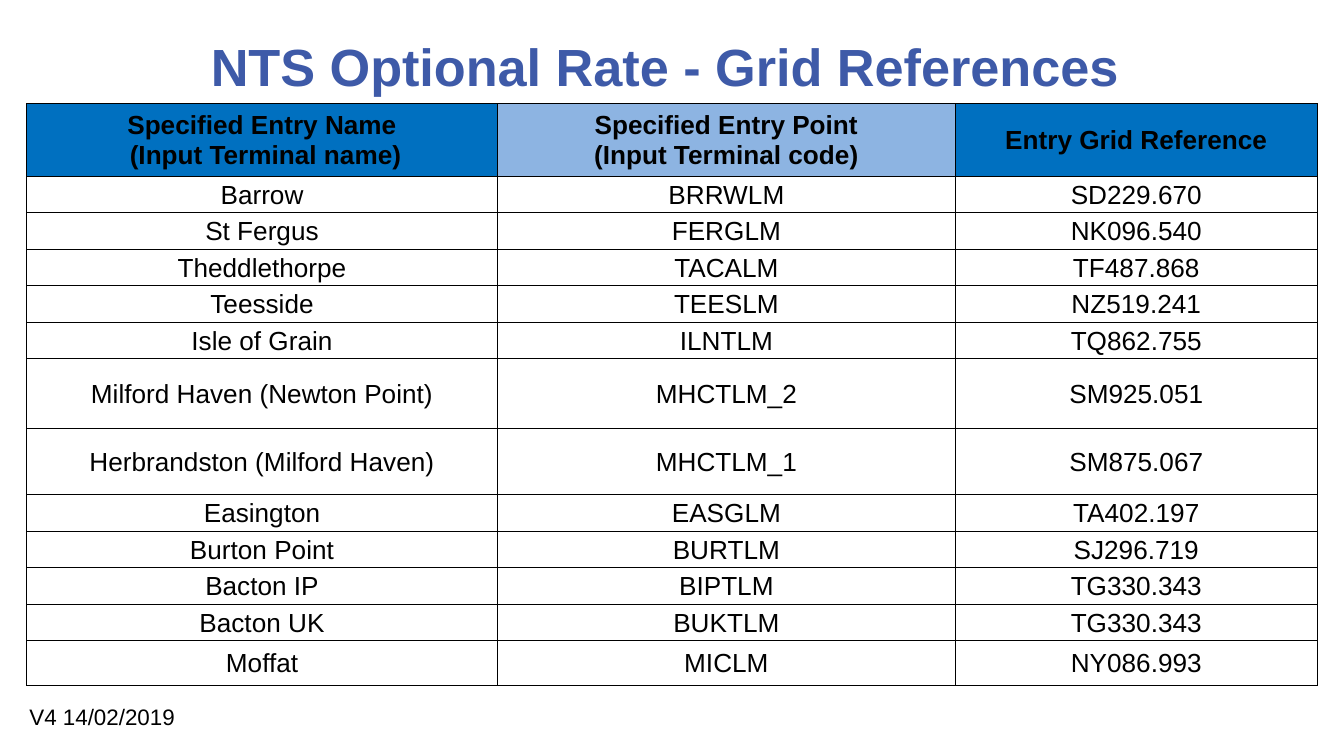
import pptx
import pptx.dml.color
import pptx.enum.text
import pptx.oxml.ns
import pptx.util
from lxml import etree

Inches = pptx.util.Inches
Pt = pptx.util.Pt
RGBColor = pptx.dml.color.RGBColor
Align = pptx.enum.text.PP_ALIGN
Anchor = pptx.enum.text.MSO_ANCHOR

TITLE_BLUE = RGBColor(0x3E, 0x5A, 0xA8)
HEADER_BLUE = RGBColor(0x00, 0x70, 0xC0)
HEADER_PALE = RGBColor(0x8D, 0xB4, 0xE2)
BLACK = RGBColor(0x00, 0x00, 0x00)

HEADERS = [
    ("Specified Entry Name\n (Input Terminal name)", HEADER_BLUE),
    ("Specified Entry Point\v(Input Terminal code)", HEADER_PALE),
    ("Entry Grid Reference", HEADER_BLUE),
]
ENTRY_POINTS = [
    ("Barrow", "BRRWLM", "SD229.670"),
    ("St Fergus", "FERGLM", "NK096.540"),
    ("Theddlethorpe", "TACALM", "TF487.868"),
    ("Teesside", "TEESLM", "NZ519.241"),
    ("Isle of Grain", "ILNTLM", "TQ862.755"),
    ("Milford Haven (Newton Point)", "MHCTLM_2", "SM925.051"),
    ("Herbrandston (Milford Haven)", "MHCTLM_1", "SM875.067"),
    ("Easington", "EASGLM", "TA402.197"),
    ("Burton Point", "BURTLM", "SJ296.719"),
    ("Bacton IP", "BIPTLM", "TG330.343"),
    ("Bacton UK", "BUKTLM", "TG330.343"),
    ("Moffat", "MICLM", "NY086.993"),
]
COLUMN_WIDTHS = [3.5, 3.41, 2.69]
TABLE_HEIGHT = 4.33
SPECIAL_HEIGHTS = {0: 0.54, 6: 0.52, 7: 0.49, 12: 0.33}


def write_text(frame, text, size=14, color=BLACK, bold=False, align=Align.CENTER):
    frame.text = text
    for paragraph in frame.paragraphs:
        paragraph.alignment = align
        for run in paragraph.runs:
            run.font.name = "Arial"
            run.font.size = Pt(size)
            run.font.bold = bold
            run.font.color.rgb = color


def add_label(slide, box, text, wrap=True, anchor=Anchor.TOP, **style):
    frame = slide.shapes.add_textbox(*map(Inches, box)).text_frame
    frame.word_wrap = wrap
    frame.vertical_anchor = anchor
    write_text(frame, text, **style)


def add_borders(cell):
    properties = cell._tc.get_or_add_tcPr()
    qn = pptx.oxml.ns.qn
    for side in ("a:lnL", "a:lnR", "a:lnT", "a:lnB"):
        line = etree.SubElement(properties, qn(side), w=str(Pt(0.5)))
        fill = etree.SubElement(line, qn("a:solidFill"))
        etree.SubElement(fill, qn("a:srgbClr"), val=str(BLACK))


def fill_cell(cell, text, color=None, **style):
    cell.margin_left = cell.margin_right = cell.margin_top = Inches(0.01)
    cell.margin_bottom = 0
    cell.vertical_anchor = Anchor.MIDDLE
    add_borders(cell)
    if color is None:
        cell.fill.background()
    else:
        cell.fill.solid()
        cell.fill.fore_color.rgb = color
    write_text(cell.text_frame, text, **style)


def add_grid_references(slide):
    row_count = len(ENTRY_POINTS) + 1
    shared_height = TABLE_HEIGHT - sum(SPECIAL_HEIGHTS.values())
    row_height = shared_height / (row_count - len(SPECIAL_HEIGHTS))
    table = slide.shapes.add_table(
        row_count, len(COLUMN_WIDTHS), Inches(0.2), Inches(0.77),
        Inches(sum(COLUMN_WIDTHS)), Inches(TABLE_HEIGHT),
    ).table
    table.first_row = table.horz_banding = False
    for column, width in zip(table.columns, COLUMN_WIDTHS):
        column.width = Inches(width)
    for index, row in enumerate(table.rows):
        row.height = Inches(SPECIAL_HEIGHTS.get(index, row_height))
    for index, (heading, color) in enumerate(HEADERS):
        fill_cell(table.cell(0, index), heading, color, bold=True)
    for row_index, entry in enumerate(ENTRY_POINTS, 1):
        for index, value in enumerate(entry):
            fill_cell(table.cell(row_index, index), value)


def main():
    deck = pptx.Presentation()
    deck.slide_width = Inches(10)
    deck.slide_height = Inches(10 * 9 / 16)
    slide = deck.slides.add_slide(deck.slide_layouts[6])
    add_label(slide, (0.5, 0.14, 9, 0.7), "NTS Optional Rate - Grid References ",
              anchor=Anchor.MIDDLE, size=28, color=TITLE_BLUE, bold=True)
    add_grid_references(slide)
    add_label(slide, (0.12, 5.18, 1.29, 0.3), "V4 14/02/2019",
              wrap=False, size=12, align=Align.LEFT)
    deck.save("out.pptx")


if __name__ == "__main__":
    main()
